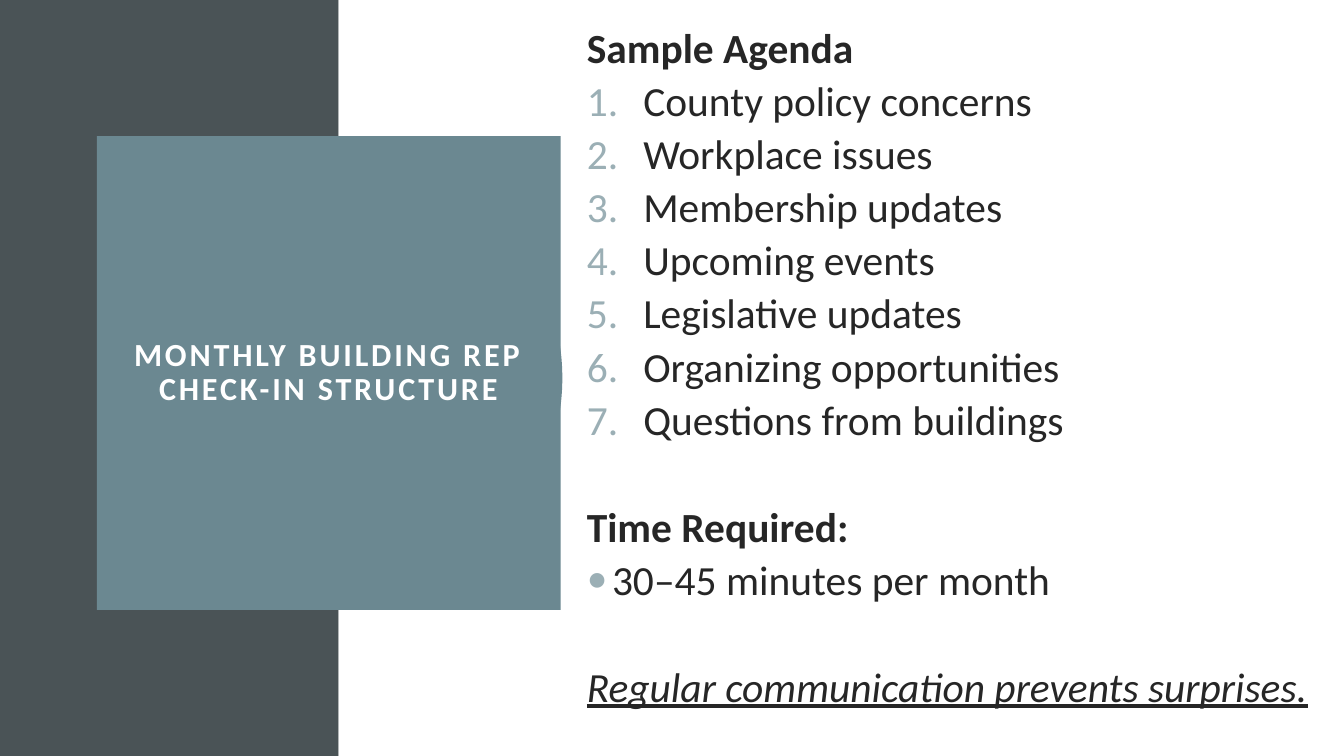
from dataclasses import dataclass
from typing import Optional

import pptx
import pptx.dml.color
import pptx.enum.shapes
import pptx.enum.text
import pptx.oxml
import pptx.oxml.ns
import pptx.util
from pptx.dml.color import RGBColor
from pptx.util import Inches, Pt

SLATE = RGBColor(0x4A, 0x53, 0x56)
TEAL = RGBColor(0x6B, 0x88, 0x91)
PALE_TEAL = RGBColor(0x9B, 0xAF, 0xB5)
INK = RGBColor(0x26, 0x26, 0x26)
WHITE = RGBColor(0xFF, 0xFF, 0xFF)

FONT = "Calibri"
LINE_GAP = 9.5
SECTION_GAP = 48
NUMBER = '<a:buAutoNum {ns} type="arabicPeriod"/>'
DOT = '<a:buChar {ns} char="•"/>'
NO_MARKER = "<a:buNone {ns}/>"


@dataclass(frozen=True)
class Panel:
    preset: pptx.enum.shapes.MSO_SHAPE
    left: float
    top: float
    width: float
    height: float
    fill: RGBColor
    outline: Optional[RGBColor] = None


@dataclass(frozen=True)
class Line:
    text: str
    marker: str = NO_MARKER
    indent: float = 0
    before: float = LINE_GAP
    bold: bool = False
    italic: bool = False
    underline: bool = False


AGENDA = ["County policy concerns", "Workplace issues", "Membership updates",
          "Upcoming events", "Legislative updates", "Organizing opportunities",
          "Questions from buildings"]

LINES = [
    Line("Sample Agenda", before=0, bold=True),
    *(Line(topic, NUMBER, 0.56) for topic in AGENDA),
    Line("Time Required:", before=SECTION_GAP, bold=True),
    Line("30–45 minutes per month", DOT, 0.25),
    Line("Regular communication prevents surprises.", before=SECTION_GAP,
         italic=True, underline=True),
]

PANELS = [
    Panel(pptx.enum.shapes.MSO_SHAPE.RECTANGLE, 0, 0, 3.36, 7.5, SLATE),
    Panel(pptx.enum.shapes.MSO_SHAPE.RECTANGLE, 3.36, 0, 9.97, 7.5, WHITE),
    Panel(pptx.enum.shapes.MSO_SHAPE.OVAL, 1.22, 1.58, 4.34, 4.34, WHITE, TEAL),
]


def draw_panel(slide: pptx.slide.Slide, panel: Panel) -> None:
    shape = slide.shapes.add_shape(
        panel.preset, Inches(panel.left), Inches(panel.top),
        Inches(panel.width), Inches(panel.height))
    shape.shadow.inherit = False
    shape.fill.solid()
    shape.fill.fore_color.rgb = panel.fill
    if panel.outline is None:
        shape.line.fill.background()
    else:
        shape.line.color.rgb = panel.outline
        shape.line.width = Pt(2.5)


def place(holder, left: float, top: float, width: float, height: float,
          inset: float):
    """Move a placeholder and return its text frame, centred vertically."""
    holder.left, holder.top = Inches(left), Inches(top)
    holder.width, holder.height = Inches(width), Inches(height)
    frame = holder.text_frame
    frame.word_wrap = True
    frame.auto_size = pptx.enum.text.MSO_AUTO_SIZE.NONE
    frame.vertical_anchor = pptx.enum.text.MSO_ANCHOR.MIDDLE
    frame.margin_left = frame.margin_right = Inches(inset)
    return frame


def set_marker(paragraph, marker: str, indent: float) -> None:
    properties = paragraph._p.get_or_add_pPr()
    properties.set("marL", str(Inches(indent)))
    properties.set("indent", str(-Inches(indent)))
    ns = pptx.oxml.ns.nsdecls("a")
    for xml in (f'<a:buClr {ns}><a:srgbClr val="{PALE_TEAL}"/></a:buClr>',
                f'<a:buFont {ns} typeface="{FONT}"/>',
                marker.format(ns=ns)):
        properties.append(pptx.oxml.parse_xml(xml))


def write(paragraph, text: str, *, size: float, color: RGBColor,
          bold: bool = False, italic: bool = False, underline: bool = False,
          align=pptx.enum.text.PP_ALIGN.LEFT, spacing: float = 1,
          before: float = 0, tracking: float = 0) -> None:
    paragraph.alignment = align
    paragraph.line_spacing = spacing
    paragraph.space_before = Pt(before)
    paragraph.space_after = Pt(0)
    run = paragraph.add_run()
    run.text = text
    font = run.font
    font.name, font.size = FONT, Pt(size)
    font.bold, font.italic, font.underline = bold, italic, underline
    font.color.rgb = color
    if tracking:
        run._r.get_or_add_rPr().set("spc", str(round(tracking * 100)))


def main() -> None:
    deck = pptx.Presentation()
    deck.slide_width, deck.slide_height = Inches(13.33), Inches(7.5)
    slide = deck.slides.add_slide(deck.slide_layouts[1])
    heading, agenda = slide.placeholders

    # Background panels and the ring behind the heading
    for panel in PANELS:
        draw_panel(slide, panel)
    for holder in (heading, agenda):  # bring the text in front of the panels
        holder.element.getparent().append(holder.element)

    # Heading block
    heading_frame = place(heading, 0.96, 1.35, 4.6, 4.7, inset=0.2)
    heading.fill.solid()
    heading.fill.fore_color.rgb = TEAL
    write(heading_frame.paragraphs[0], "MONTHLY BUILDING REP CHECK-IN STRUCTURE",
          size=23, color=WHITE, bold=True, spacing=0.9, tracking=2,
          align=pptx.enum.text.PP_ALIGN.CENTER)

    # Agenda, time and closing line
    agenda_frame = place(agenda, 5.72, 0.15, 7.36, 7.06, inset=0.1)
    for index, line in enumerate(LINES):
        paragraph = (agenda_frame.add_paragraph() if index
                     else agenda_frame.paragraphs[0])
        set_marker(paragraph, line.marker, line.indent)
        write(paragraph, line.text, size=29.6, color=INK, bold=line.bold,
              italic=line.italic, underline=line.underline,
              spacing=0.8, before=line.before)

    deck.save("out.pptx")


if __name__ == "__main__":
    main()
